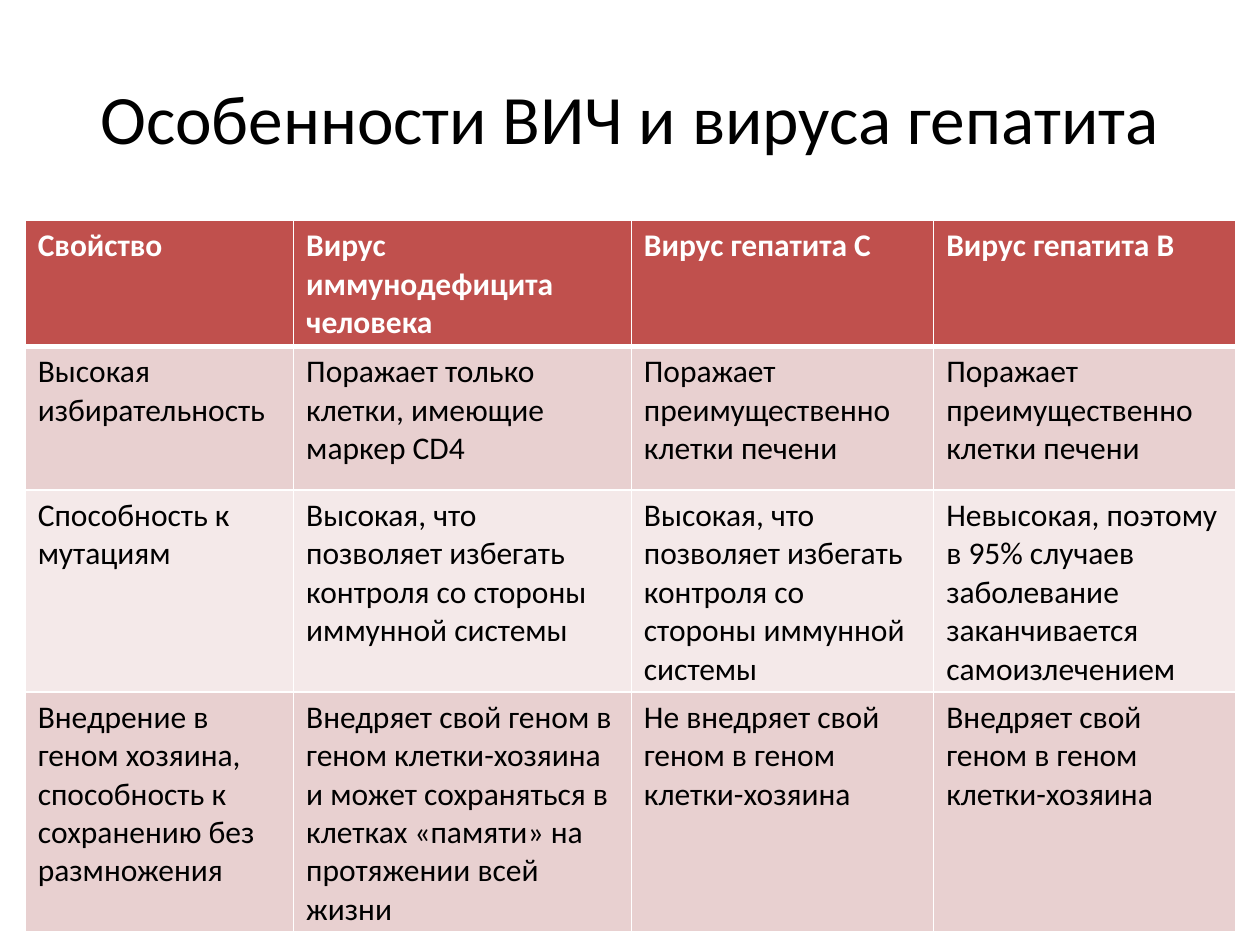
from pptx import Presentation
from pptx.dml.color import RGBColor
from pptx.enum.text import MSO_ANCHOR, PP_ALIGN
from pptx.oxml import parse_xml
from pptx.oxml.ns import nsdecls
from pptx.util import Pt

COLORS = {
    "text": "000000",
    "header_text": "FFFFFF",
    "border": "FFFFFF",
    "header": "C0504D",
    "odd_row": "E8D0D0",
    "even_row": "F4E9E9",
}

COL_WIDTHS = [153.4, 193, 172.8, 172.8]
ROW_HEIGHTS = [57.6, 82.1, 106.6, 131]

LIVER = "Поражает преимущественно \nклетки печени"
EVASION = "Высокая, что позволяет избегать контроля со стороны иммунной системы"
ROWS = [
    ["Свойство", "Вирус иммунодефицита человека", "Вирус гепатита С", "Вирус гепатита В"],
    ["Высокая избирательность", "Поражает только клетки, имеющие маркер CD4", LIVER, LIVER],
    ["Способность к мутациям", EVASION, EVASION,
     "Невысокая, поэтому в 95% случаев заболевание заканчивается самоизлечением"],
    ["Внедрение в геном хозяина, способность к сохранению без размножения",
     "Внедряет свой геном в геном клетки-хозяина и может сохраняться "
     "в клетках «памяти» на протяжении всей жизни",
     "Не внедряет свой геном в геном клетки-хозяина",
     "Внедряет свой геном в геном клетки-хозяина"],
]


class SlideBuilder:
    font = "Calibri"
    title_size = 39.6
    cell_size = 18

    def __init__(self, slide):
        self.s = slide

    def add_text(self, p, text, size, color, bold=False):
        for i, line in enumerate(text.split("\n")):
            if i:
                p.add_line_break()
            r = p.add_run()
            r.text = line
            r.font.name = self.font
            r.font.size = Pt(size)
            r.font.bold = bold
            r.font.color.rgb = RGBColor.from_string(COLORS[color])

    def title(self, text, left, top, width, height):
        sp = self.s.shapes.add_textbox(Pt(left), Pt(top), Pt(width), Pt(height))
        tf = sp.text_frame
        tf.word_wrap = True
        tf.vertical_anchor = MSO_ANCHOR.MIDDLE
        p = tf.paragraphs[0]
        p.alignment = PP_ALIGN.CENTER
        self.add_text(p, text, self.title_size, "text")

    def borders(self, cell, widths):
        # Borders must come before the fill in the cell properties
        tc_pr = cell._tc.get_or_add_tcPr()
        for i, (side, width) in enumerate(widths.items()):
            tc_pr.insert(i, parse_xml(
                f'<a:{side} {nsdecls("a")} w="{Pt(width)}"><a:solidFill>'
                f'<a:srgbClr val="{COLORS["border"]}"/></a:solidFill></a:{side}>'))

    def table(self, rows, left, top, col_widths, row_heights):
        table = self.s.shapes.add_table(
            len(rows), len(col_widths), Pt(left), Pt(top),
            Pt(sum(col_widths)), Pt(sum(row_heights))).table
        for col, width in zip(table.columns, col_widths):
            col.width = Pt(width)
        for i, (row, height) in enumerate(zip(rows, row_heights)):
            table.rows[i].height = Pt(height)
            header = i == 0
            fill = "header" if header else "odd_row" if i % 2 else "even_row"
            for j, text in enumerate(row):
                cell = table.cell(i, j)
                cell.fill.solid()
                cell.fill.fore_color.rgb = RGBColor.from_string(COLORS[fill])
                self.borders(cell, {"lnL": 1, "lnR": 1,
                                    "lnT": 3 if i == 1 else 1,
                                    "lnB": 3 if header else 1})
                self.add_text(cell.text_frame.paragraphs[0], text, self.cell_size,
                              "header_text" if header else "text", header)


def main():
    prs = Presentation()
    prs.slide_width, prs.slide_height = Pt(720), Pt(540)
    slide = SlideBuilder(prs.slides.add_slide(prs.slide_layouts[6]))

    # Title
    slide.title("Особенности ВИЧ и вируса гепатита", 36, 21.6, 648, 90)

    # Comparison of the viruses
    slide.table(ROWS, 14.4, 126, COL_WIDTHS, ROW_HEIGHTS)

    prs.save("out.pptx")


if __name__ == "__main__":
    main()
